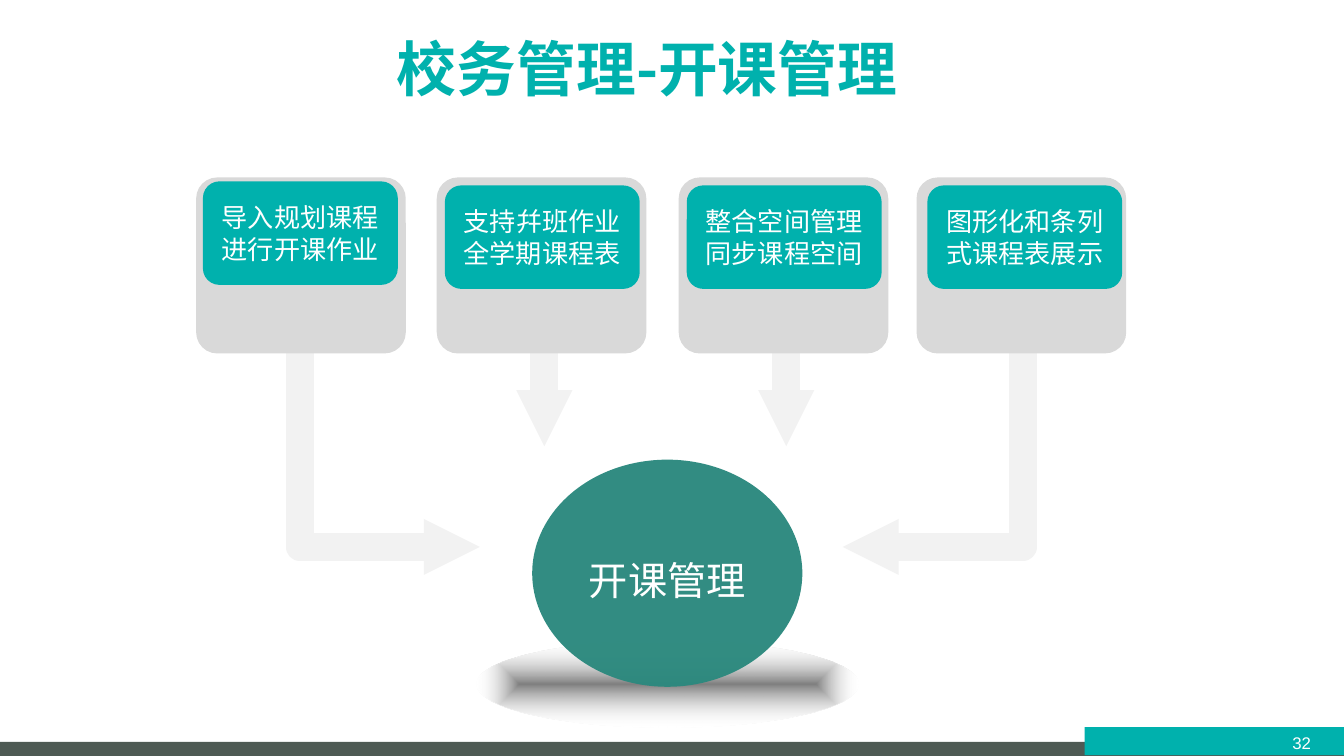
from typing import NamedTuple

from pptx import Presentation
from pptx.dml.color import RGBColor
from pptx.enum import shapes as kinds, text as txt
from pptx.oxml import parse_xml
from pptx.oxml.ns import nsdecls
from pptx.util import Inches, Pt

TEAL = RGBColor(0x00, 0xB1, 0xAD)
PINE = RGBColor(0x2C, 0x89, 0x7E)
SLATE = RGBColor(0x4E, 0x5A, 0x54)
GREY = RGBColor(0xD9, 0xD9, 0xD9)
PALE = RGBColor(0xF2, 0xF2, 0xF2)
WHITE = RGBColor(0xFF, 0xFF, 0xFF)
RECT = kinds.MSO_SHAPE.RECTANGLE
ROUND = kinds.MSO_SHAPE.ROUNDED_RECTANGLE
OVAL = kinds.MSO_SHAPE.OVAL


class Box(NamedTuple):
    left: float
    top: float
    width: float
    height: float

    def emu(self) -> list:
        return [Inches(side) for side in self]


class Card(NamedTuple):
    text: str
    back: float
    front: float
    top: float = 1.38


CARDS = [
    Card("导入规划课程进行开课作业", 1.46, 1.51, 1.35),
    Card("支持幷班作业全学期课程表", 3.25, 3.31),
    Card("整合空间管理同步课程空间", 5.05, 5.11),
    Card("图形化和条列式课程表展示", 6.82, 6.9),
]
START = 2.63  # lower edge of the cards, where the arrows leave
DROPS = [5.85, 4.05]
BENDS = [(7.61, 6.27), (2.23, 3.57)]


def block(slide, kind, box: Box, fill: RGBColor, adj: float = 0):
    shape = slide.shapes.add_shape(kind, *box.emu())
    shape.shadow.inherit = False
    shape.fill.solid()
    shape.fill.fore_color.rgb = fill
    shape.line.fill.background()
    if adj:
        shape.adjustments[0] = adj
    return shape


def write(shape, words: str, size: float, face: str, color: RGBColor = WHITE,
          pad: tuple = (0.1, 0.05)):
    frame = shape.text_frame
    frame.word_wrap = True
    frame.auto_size = txt.MSO_AUTO_SIZE.NONE
    frame.vertical_anchor = txt.MSO_ANCHOR.MIDDLE
    frame.margin_left = frame.margin_right = Inches(pad[0])
    frame.margin_top = frame.margin_bottom = Inches(pad[1])
    frame.text = words
    para = frame.paragraphs[0]
    para.alignment = txt.PP_ALIGN.CENTER
    para.font.size = Pt(size)
    para.font.name = face
    para.font.color.rgb = color
    return para


def arrow(shape) -> None:
    """Give a line or open outline the wide pale stroke and arrowhead."""
    shape.line.color.rgb = PALE
    shape.line.width = Pt(15)
    stroke = shape.line._get_or_add_ln()
    for tag in ("<a:round %s/>",
                '<a:tailEnd %s type="triangle" w="sm" len="sm"/>'):
        stroke.append(parse_xml(tag % nsdecls("a")))
    props = shape._element.spPr
    props.append(parse_xml("<a:effectLst %s/>" % nsdecls("a")))


def drop(slide, x: float) -> None:
    arrow(slide.shapes.add_connector(
        kinds.MSO_CONNECTOR.STRAIGHT,
        Inches(x), Inches(START), Inches(x), Inches(3.32)))


def bend(slide, x: float, end: float) -> None:
    low = Inches(4.07)
    pen = slide.shapes.build_freeform(Inches(x), Inches(START))
    pen.add_line_segments([(Inches(x), low), (Inches(end), low)], close=False)
    shape = pen.convert_to_shape()
    shape.fill.background()
    arrow(shape)


def glow(shape) -> None:
    """Fade a shape from grey at its centre to clear at its edge."""
    props = shape._element.spPr
    props.replace(props.find("{*}solidFill"), parse_xml(
        '<a:gradFill %s rotWithShape="1"><a:gsLst>'
        '<a:gs pos="0"><a:srgbClr val="808080"/></a:gs>'
        '<a:gs pos="100000"><a:srgbClr val="FFFFFF"><a:alpha val="0"/>'
        '</a:srgbClr></a:gs></a:gsLst><a:path path="shape">'
        '<a:fillToRect l="50000" t="50000" r="50000" b="50000"/></a:path>'
        '</a:gradFill>' % nsdecls("a")))


def main() -> None:
    deck = Presentation()
    deck.slide_width = Inches(10)
    deck.slide_height = deck.slide_width * 9 // 16
    slide = deck.slides.add_slide(deck.slide_layouts[5])

    # Title
    title = slide.shapes.title
    title.left, title.top, title.width, title.height = Box(
        0.36, 0.03, 8.91, 0.94).emu()
    head = write(title, "校务管理-开课管理", 32, "Noto Sans CJK SC", TEAL)
    head.font.bold = True

    # Footer band and page number
    block(slide, RECT, Box(0, 5.52, 10, 0.11), SLATE)
    block(slide, RECT, Box(8.07, 5.41, 1.93, 0.21), TEAL)
    page = slide.shapes.add_textbox(*Box(9.41, 5.38, 0.55, 0.3).emu())
    write(page, "32", 9, "Arial")

    # Arrows towards the hub
    for x in DROPS:
        drop(slide, x)
    for x, end in BENDS:
        bend(slide, x, end)

    # Cards
    for card in CARDS:
        block(slide, ROUND, Box(card.back, 1.32, 1.56, 1.31), GREY, 0.12)
    for card in CARDS:
        front = block(slide, ROUND, Box(card.front, card.top, 1.45, 0.77),
                      TEAL, 0.16)
        write(front, card.text, 14, "Arial Narrow")

    # Hub and the shade below it
    glow(block(slide, OVAL, Box(3.55, 4.77, 2.84, 0.64), GREY))
    hub = block(slide, OVAL, Box(3.96, 3.42, 2.01, 1.69), PINE)
    tint = hub._element.spPr.find("{*}solidFill")[0]
    tint.append(parse_xml('<a:alpha %s val="97000"/>' % nsdecls("a")))
    write(hub, "开课管理", 21, "Calibri", pad=(0, 0)).line_spacing = 1.3

    deck.save("out.pptx")


if __name__ == "__main__":
    main()
